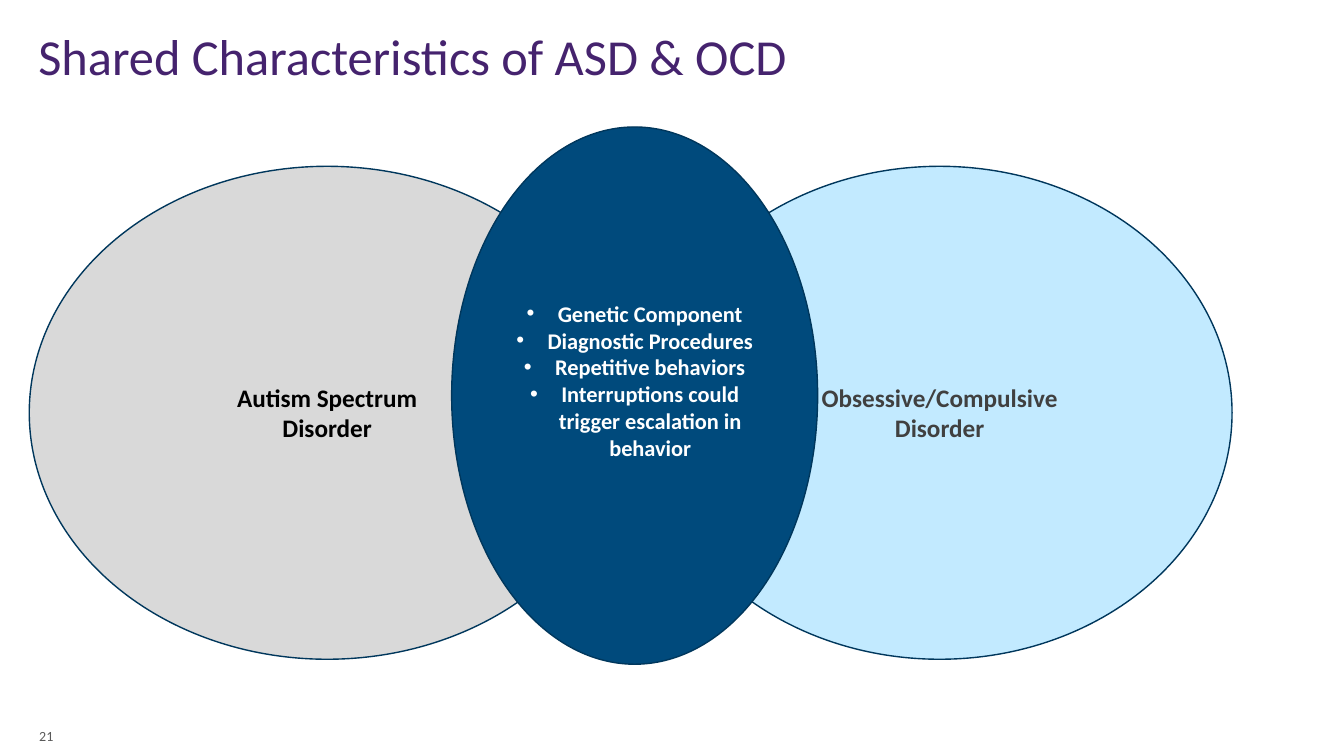
"""Build a slide comparing ASD and OCD with three overlapping ellipses."""
from lxml.etree import SubElement
from pptx import Presentation
from pptx.dml.color import RGBColor
from pptx.enum.shapes import MSO_SHAPE as Shape
from pptx.enum.text import MSO_ANCHOR as Anchor, MSO_AUTO_SIZE as AutoSize, PP_ALIGN as Align
from pptx.oxml.ns import qn
from pptx.util import Pt

PX = 9144
BULLET_INDENT = 31


def color(value):
    return RGBColor.from_string(value)


def write_text(shape, text, size, fill, bold=False, align=Align.LEFT,
               anchor=Anchor.MIDDLE, bullets=False, spacing=1.0):
    frame = shape.text_frame
    frame.word_wrap = True
    frame.auto_size = AutoSize.NONE
    frame.vertical_anchor = anchor
    frame.text = text
    for paragraph in frame.paragraphs:
        paragraph.alignment = align
        paragraph.line_spacing = spacing
        if bullets:
            properties = paragraph._p.get_or_add_pPr()
            properties.set("marL", str(BULLET_INDENT * PX))
            properties.set("indent", str(-BULLET_INDENT * PX))
            SubElement(properties, qn("a:buFont")).set("typeface", "Arial")
            SubElement(properties, qn("a:buChar")).set("char", "•")
        for run in paragraph.runs:
            font = run.font
            font.name = "Calibri"
            font.size = Pt(size)
            font.bold = bold
            font.color.rgb = color(fill)


presentation = Presentation()
presentation.slide_width = 1333 * PX
presentation.slide_height = 750 * PX
slide = presentation.slides.add_slide(presentation.slide_layouts[5])

title = slide.shapes.title
title.left, title.top, title.width, title.height = (
    length * PX for length in (28, 21, 953, 76))
write_text(title, "Shared Characteristics of ASD & OCD", size=36,
           fill="45236E", spacing=0.9)

page_number = slide.shapes.add_textbox(29 * PX, 703 * PX, 59 * PX, 40 * PX)
write_text(page_number, "21", size=10, fill="595959", anchor=Anchor.BOTTOM)

shared_traits = "\n".join([
    "Genetic Component",
    "Diagnostic Procedures",
    "Repetitive behaviors",
    "Interruptions could trigger escalation in behavior",
])
ellipses = [
    ((29, 165, 591, 489), "D9D9D9", "Autism Spectrum\nDisorder",
     dict(size=18, fill="000000")),
    ((642, 165, 580, 489), "C2EAFF", "Obsessive/Compulsive\nDisorder",
     dict(size=18, fill="404040")),
    ((448, 126, 363, 533), "004A7C", shared_traits,
     dict(size=16, fill="FFFFFF", bullets=True)),
]
for box, background, text, text_format in ellipses:
    ellipse = slide.shapes.add_shape(Shape.OVAL, *(length * PX for length in box))
    ellipse.shadow.inherit = False
    ellipse.fill.solid()
    ellipse.fill.fore_color.rgb = color(background)
    ellipse.line.color.rgb = color("00375C")
    ellipse.line.width = Pt(1)
    write_text(ellipse, text, bold=True, align=Align.CENTER, **text_format)

ellipse.text_frame.margin_bottom = 35 * PX

presentation.save("out.pptx")
